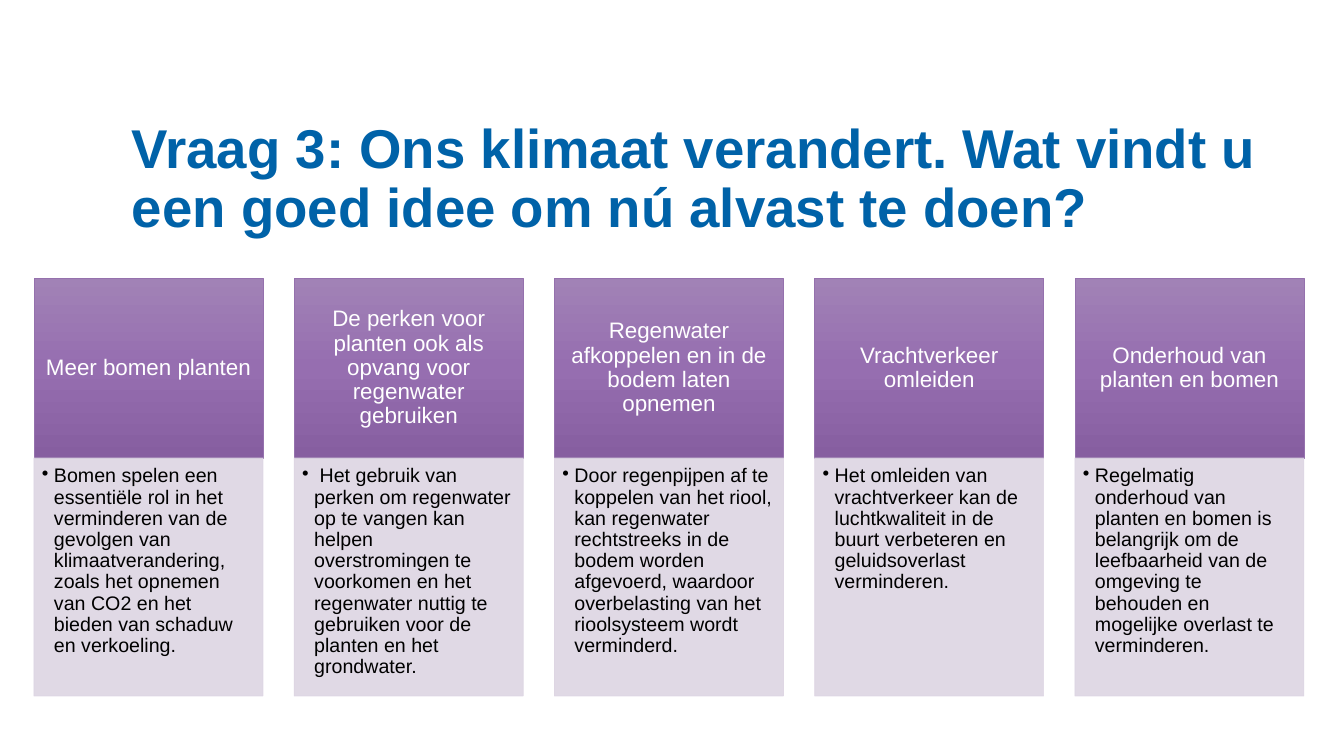
from copy import deepcopy

from lxml import etree
from pptx import Presentation
from pptx import util as u
from pptx.dml.color import RGBColor
from pptx.enum import shapes, text
from pptx.oxml.ns import qn

PX = 12192000 / 1344
BLUE = RGBColor(0x00, 0x62, 0xA8)
WHITE = RGBColor(0xFF, 0xFF, 0xFF)
BLACK = RGBColor(0x00, 0x00, 0x00)
PURPLE_LINE = RGBColor(0x95, 0x71, 0xAD)
PURPLE_STOPS = [
    (0, RGBColor(0xA1, 0x82, 0xB6)),
    (0.5, RGBColor(0x96, 0x6E, 0xB0)),
    (1, RGBColor(0x86, 0x5E, 0xA0)),
]
LILAC = RGBColor(0xDD, 0xD5, 0xE3)

COLUMN_LEFT, LAST_COLUMN_LEFT, COLUMN_WIDTH = 34, 1075, 229
HEADER_TOP, HEADER_HEIGHT, BODY_HEIGHT = 278, 180, 238

IDEAS = [
    ("Meer bomen planten",
     "Bomen spelen een essentiële rol in het verminderen van de gevolgen van "
     "klimaatverandering, zoals het opnemen van CO2 en het bieden van schaduw en verkoeling."),
    ("De perken voor planten ook als opvang voor regenwater gebruiken",
     " Het gebruik van perken om regenwater op te vangen kan helpen overstromingen te "
     "voorkomen en het regenwater nuttig te gebruiken voor de planten en het grondwater."),
    ("Regenwater afkoppelen en in de bodem laten opnemen",
     "Door regenpijpen af te koppelen van het riool, kan regenwater rechtstreeks in de bodem "
     "worden afgevoerd, waardoor overbelasting van het rioolsysteem wordt verminderd."),
    ("Vrachtverkeer omleiden",
     "Het omleiden van vrachtverkeer kan de luchtkwaliteit in de buurt verbeteren en "
     "geluidsoverlast verminderen."),
    ("Onderhoud van planten en bomen",
     "Regelmatig onderhoud van planten en bomen is belangrijk om de leefbaarheid van de "
     "omgeving te behouden en mogelijke overlast te verminderen."),
]


def px(value):
    return u.Emu(round(value * PX))


def write(shape, content, size, color, insets, anchor=text.MSO_ANCHOR.TOP,
          align=text.PP_ALIGN.LEFT, bold=False, bullet_indent=0):
    frame = shape.text_frame
    frame.word_wrap = True
    frame.auto_size = text.MSO_AUTO_SIZE.NONE
    frame.vertical_anchor = anchor
    frame.margin_left, frame.margin_top, frame.margin_right, frame.margin_bottom = map(px, insets)
    paragraph = frame.paragraphs[0]
    paragraph.text = content
    paragraph.alignment = align
    paragraph.line_spacing = 0.9
    if bullet_indent:
        properties = paragraph._p.get_or_add_pPr()
        properties.set("marL", str(px(bullet_indent)))
        properties.set("indent", str(-px(bullet_indent)))
        etree.SubElement(properties, qn("a:buChar"), char="•")
    font = paragraph.runs[0].font
    font.name, font.size, font.bold = "Arial", u.Pt(size), bold
    font.color.rgb = color


presentation = Presentation()
presentation.slide_width, presentation.slide_height = px(1344), px(756)
slide = presentation.slides.add_slide(presentation.slide_layouts[5])

title = slide.shapes.title
title.left, title.top, title.width, title.height = px(132), px(121), px(1159), px(134)
write(title, "Vraag 3: Ons klimaat verandert. Wat vindt u een goed idee om nú alvast te doen?",
      size=39, color=BLUE, insets=(0, 0, 0, 0), bold=True)

column_step = (LAST_COLUMN_LEFT - COLUMN_LEFT) / (len(IDEAS) - 1)
for index, (heading, explanation) in enumerate(IDEAS):
    left = px(COLUMN_LEFT + index * column_step)

    header = slide.shapes.add_shape(shapes.MSO_SHAPE.RECTANGLE, left, px(HEADER_TOP),
                                    px(COLUMN_WIDTH), px(HEADER_HEIGHT))
    header.fill.gradient()
    header.fill.gradient_angle = 270
    stop_list = header._element.spPr.find(qn("a:gradFill")).find(qn("a:gsLst"))
    stop_list.append(deepcopy(stop_list[0]))
    for stop, (position, color) in zip(header.fill.gradient_stops, PURPLE_STOPS):
        stop.position = position
        stop.color.rgb = color
    header.line.color.rgb = PURPLE_LINE
    write(header, heading, size=16, color=WHITE, insets=(12, 7, 12, 7),
          anchor=text.MSO_ANCHOR.MIDDLE, align=text.PP_ALIGN.CENTER)

    body = slide.shapes.add_shape(shapes.MSO_SHAPE.RECTANGLE, left, px(HEADER_TOP + HEADER_HEIGHT),
                                  px(COLUMN_WIDTH), px(BODY_HEIGHT))
    body.fill.solid()
    body.fill.fore_color.rgb = LILAC
    body.line.color.rgb = LILAC
    for color_element in body._element.spPr.iter(qn("a:srgbClr")):
        etree.SubElement(color_element, qn("a:alpha"), val="90000")
    write(body, explanation, size=14, color=BLACK, insets=(8, 8, 11, 12), bullet_indent=12)

    for shape in (header, body):
        shape.line.width = u.Pt(0.5)
        shape.shadow.inherit = False

presentation.save("out.pptx")
